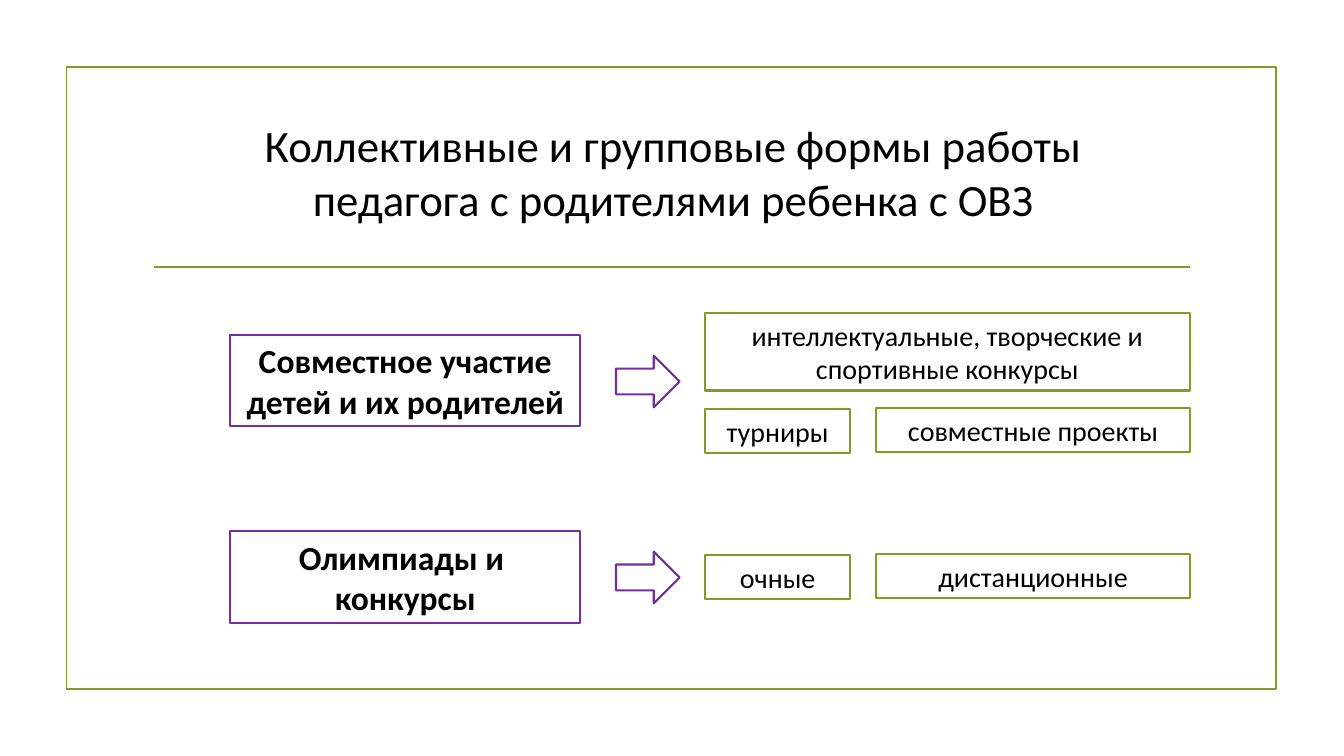
"""Build the slide on group forms of work with parents."""
from lxml.etree import SubElement
from pptx import Presentation
from pptx.dml.color import RGBColor
from pptx.enum.shapes import MSO_CONNECTOR, MSO_SHAPE
from pptx.enum.text import MSO_ANCHOR, PP_ALIGN
from pptx.oxml.ns import qn
from pptx.util import Pt

GREEN = RGBColor(0x83, 0x99, 0x2A)
PURPLE = RGBColor(0x70, 0x30, 0xA0)
WHITE = RGBColor(0xFF, 0xFF, 0xFF)
BLACK = RGBColor(0x00, 0x00, 0x00)


def write_text(shape, text, size, bold=False):
    frame = shape.text_frame
    frame.word_wrap = True
    frame.vertical_anchor = MSO_ANCHOR.MIDDLE
    frame.text = text
    for paragraph in frame.paragraphs:
        paragraph.alignment = PP_ALIGN.CENTER
        paragraph.font.name = "Calibri"
        paragraph.font.size = Pt(size)
        paragraph.font.bold = bold
        paragraph.font.color.rgb = BLACK


def add_outlined(kind, left, top, width, height, color, weight=1.5):
    shape = slide.shapes.add_shape(kind, Pt(left), Pt(top), Pt(width), Pt(height))
    shape.shadow.inherit = False
    shape.fill.solid()
    shape.fill.fore_color.rgb = WHITE
    shape.line.color.rgb = color
    shape.line.width = Pt(weight)
    return shape


presentation = Presentation()
presentation.slide_width = Pt(960)
presentation.slide_height = Pt(540)
slide = presentation.slides.add_slide(presentation.slide_layouts[5])

border = add_outlined(MSO_SHAPE.RECTANGLE, 47.5, 48, 864, 444, GREEN, 1.25)
border.fill.background()

divider = slide.shapes.add_connector(
    MSO_CONNECTOR.STRAIGHT, Pt(110), Pt(190.8), Pt(850), Pt(190.8))
divider.line.color.rgb = GREEN
divider.line.width = Pt(1.25)
SubElement(divider._element.spPr, qn("a:effectLst"))

title = slide.shapes.title
title.left, title.top, title.width, title.height = Pt(71), Pt(80), Pt(820), Pt(85)
write_text(title, "Коллективные и групповые формы работы\vпедагога с родителями ребенка с ОВЗ", 32)

topics = [
    ("Совместное участие детей и их родителей", 239, 254),
    ("Олимпиады и \nконкурсы", 379.4, 394),
]
for text, box_top, arrow_top in topics:
    box = add_outlined(MSO_SHAPE.RECTANGLE, 164.5, box_top, 250, 65.5, PURPLE)
    write_text(box, text, 24, bold=True)
    add_outlined(MSO_SHAPE.RIGHT_ARROW, 440, arrow_top, 45.5, 37, PURPLE)

forms = [
    ("интеллектуальные, творческие и спортивные конкурсы", 503.5, 223.5, 346.5, 55.5),
    ("турниры", 503.5, 292.2, 104, 31.5),
    ("совместные проекты", 626, 291.6, 224, 31.5),
    ("очные", 503.5, 396.5, 104, 31.5),
    ("дистанционные", 626, 395.6, 224, 31.5),
]
for text, *bounds in forms:
    write_text(add_outlined(MSO_SHAPE.RECTANGLE, *bounds, GREEN), text, 20)

presentation.save("out.pptx")
